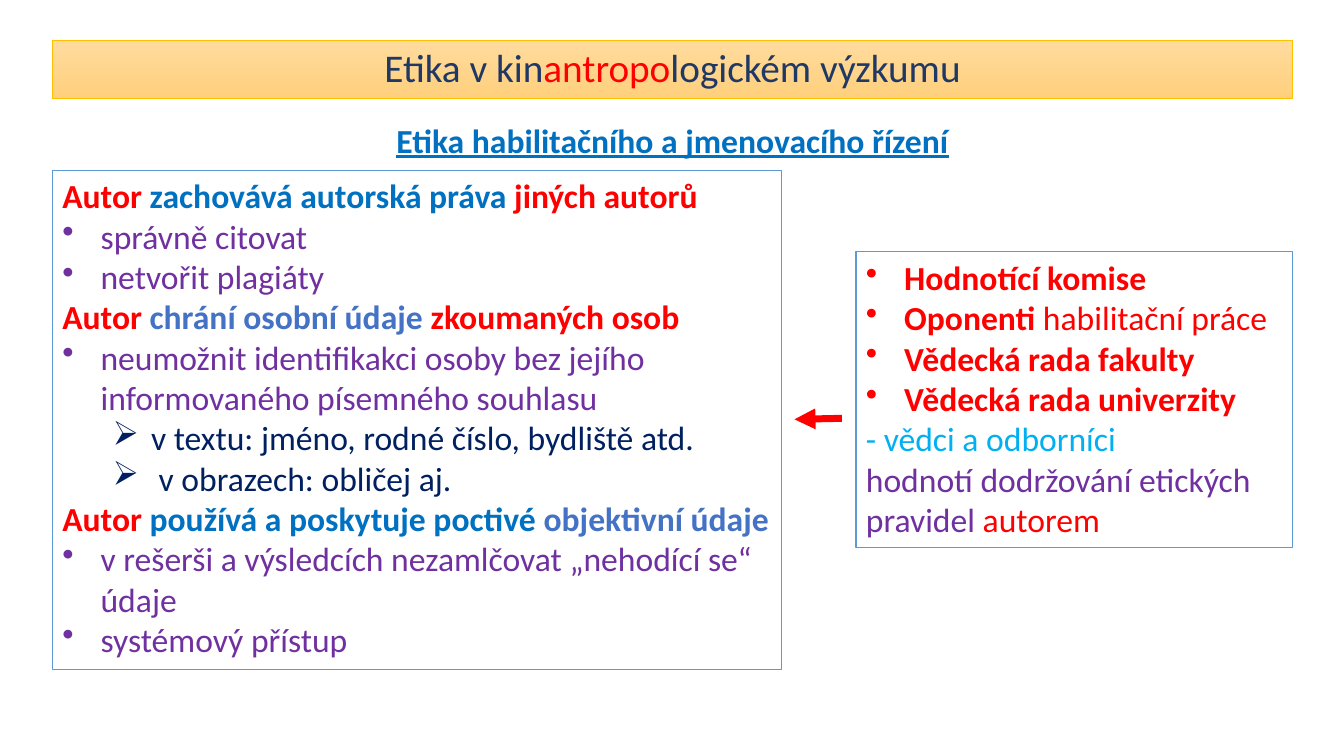
from dataclasses import dataclass
from lxml.etree import SubElement
from pptx import Presentation
from pptx.dml.color import RGBColor
from pptx.enum.shapes import MSO_CONNECTOR as Link, MSO_SHAPE as Shape
from pptx.enum.text import MSO_ANCHOR as Anchor, MSO_AUTO_SIZE as Fit, PP_ALIGN as Align
from pptx.oxml.ns import qn
from pptx.util import Inches, Pt


@dataclass(frozen=True)
class Theme:
    font: str = "Calibri"
    head: int = 28
    body: int = 24
    navy: str = "203864"
    dark: str = "002060"
    red: str = "FF0000"
    blue: str = "0070C0"
    soft: str = "4472C4"
    sky: str = "00B0F0"
    violet: str = "7030A0"
    edge: str = "5B9BD5"
    gold: str = "FFC000"
    light: str = "FFDB9E"
    deep: str = "FFD07C"


T = Theme()
LEFT, WIDE = 0.52, 12.3
HANG = 0.38


def rgb(code):
    return RGBColor.from_string(code)


def place(shape, left, top, width, height):
    shape.left, shape.top = Inches(left), Inches(top)
    shape.width, shape.height = Inches(width), Inches(height)


def write(para, *runs, size=T.body, bold=False, under=None, align=Align.LEFT,
          mark=None, indent=0, lines=1.0, before=0):
    """Fill a paragraph with (text, colour) runs; a third item overrides bold."""
    para.alignment, para.line_spacing, para.space_before = align, lines, Pt(before)
    for text, color, *own in runs:
        run = para.add_run()
        run.text = text
        font = run.font
        font.name, font.size, font.underline = T.font, Pt(size), under
        font.bold = own[0] if own else bold
        font.color.rgb = rgb(color)
    # Bullet and hanging indent
    props = para._p.get_or_add_pPr()
    props.set("marL", str(Inches(indent)))
    props.set("indent", str(Inches(-HANG if mark else 0)))
    if mark:
        SubElement(props, qn("a:buChar")).set("char", mark)
    else:
        SubElement(props, qn("a:buNone"))


def setup(shape, anchor):
    frame = shape.text_frame
    frame.word_wrap, frame.auto_size = True, Fit.NONE
    frame.vertical_anchor = anchor
    return frame


def heading(shape, box, *runs, anchor=Anchor.TOP, **style):
    place(shape, *box)
    frame = setup(shape, anchor)
    write(frame.paragraphs[0], *runs, align=Align.CENTER, lines=0.9, **style)


def panel(slide, box, rows):
    shape = slide.shapes.add_shape(Shape.RECTANGLE, *map(Inches, box))
    shape.shadow.inherit = False
    shape.fill.background()
    shape.line.color.rgb, shape.line.width = rgb(T.edge), Pt(0.75)
    frame = setup(shape, Anchor.TOP)
    for i, (runs, style) in enumerate(rows):
        para = frame.add_paragraph() if i else frame.paragraphs[0]
        write(para, *runs, **style)


def arrow(slide, start, end):
    line = slide.shapes.add_connector(Link.STRAIGHT, *map(Inches, start + end))
    line.line.color.rgb, line.line.width = rgb(T.red), Pt(5)
    SubElement(line.line._get_or_add_ln(), qn("a:tailEnd")).set("type", "triangle")
    SubElement(line._element.spPr, qn("a:effectLst"))


# Kinds of row in the panels
def lead(*runs):
    return runs, dict(bold=True)


def item(*runs, bold=False):
    return runs, dict(mark="•", indent=HANG, bold=bold)


def point(text):
    return item((text, T.violet))


def detail(text):
    return [(text, T.dark)], dict(mark="➢", indent=0.88)


def main():
    deck = Presentation()
    deck.slide_width, deck.slide_height = Inches(13.33), Inches(7.5)
    slide = deck.slides.add_slide(deck.slide_layouts[1])
    title, sub = slide.placeholders

    # Title bar and subtitle
    heading(title, (LEFT, 0.4, WIDE, 0.58), ("Etika v kin", T.navy),
            ("antropo", T.red), ("logickém výzkumu", T.navy),
            size=T.head, anchor=Anchor.MIDDLE)
    title.fill.gradient()
    title.fill.gradient_angle = 270
    for stop, color in zip(title.fill.gradient_stops, (T.light, T.deep)):
        stop.color.rgb = rgb(color)
    title.line.color.rgb, title.line.width = rgb(T.gold), Pt(0.5)
    heading(sub, (LEFT, 1.18, WIDE, 0.51),
            ("Etika habilitačního a jmenovacího řízení", T.blue),
            bold=True, under=True, before=10)

    # Duties of the author
    panel(slide, (LEFT, 1.69, 7.23, 4.95), [
        lead(("Autor", T.red), (" zachovává autorská práva ", T.blue),
             ("jiných autorů", T.red)),
        point("správně citovat"),
        point("netvořit plagiáty"),
        lead(("Autor ", T.red), ("chrání osobní údaje ", T.soft),
             ("zkoumaných osob", T.red)),
        point("neumožnit identifikakci osoby bez jejího "
              "informovaného písemného souhlasu"),
        detail("v textu: jméno, rodné číslo, bydliště atd."),
        detail(" v obrazech: obličej aj."),
        lead(("Autor", T.red), (" používá a poskytuje poctivé ", T.blue),
             ("objektivní údaje", T.soft)),
        point("v rešerši a výsledcích nezamlčovat „nehodící se“ údaje"),
        point("systémový přístup"),
    ])

    # Those who judge
    panel(slide, (8.49, 2.5, 4.33, 2.93), [
        item(("Hodnotící komise", T.red), bold=True),
        item(("Oponenti ", T.red), ("habilitační práce", T.red, False), bold=True),
        item(("Vědecká rada fakulty", T.red), bold=True),
        item(("Vědecká rada univerzity", T.red), bold=True),
        ([("- vědci a odborníci", T.sky)], {}),
        ([("hodnotí dodržování etických pravidel ", T.violet),
          ("autorem", T.red)], {}),
    ])
    arrow(slide, (8.35, 4.15), (7.88, 4.16))
    deck.save("out.pptx")


if __name__ == "__main__":
    main()
